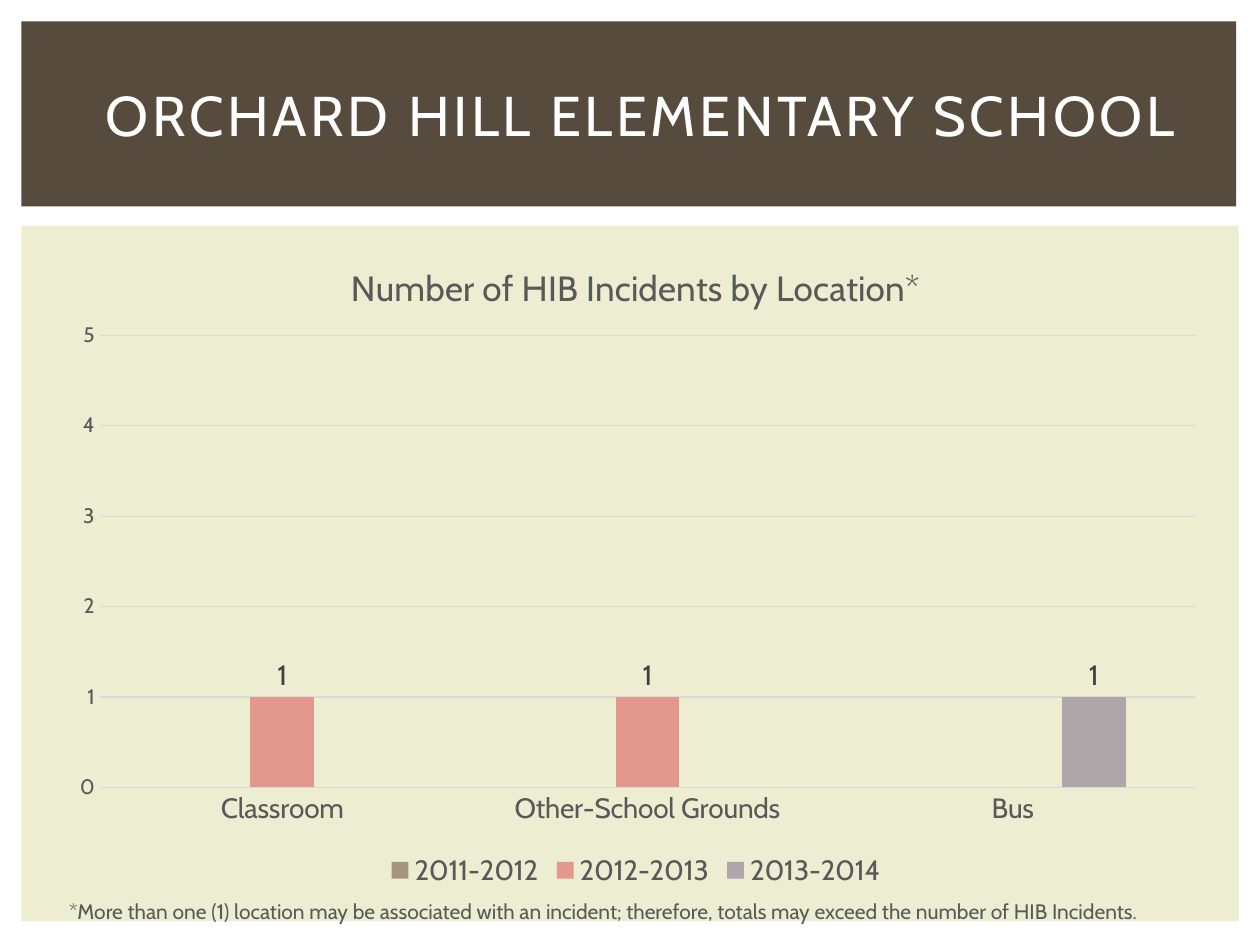
from lxml.etree import SubElement
from pptx import Presentation
from pptx.chart.data import CategoryChartData
from pptx.dml.color import RGBColor
from pptx.enum.chart import XL_CHART_TYPE as ChartType
from pptx.enum.chart import XL_LABEL_POSITION as LabelPosition
from pptx.enum.chart import XL_LEGEND_POSITION as LegendPosition
from pptx.enum.chart import XL_TICK_MARK as TickMark
from pptx.enum.shapes import MSO_SHAPE as Shape
from pptx.enum.text import MSO_ANCHOR as Anchor
from pptx.enum.text import PP_ALIGN as Align
from pptx.oxml.ns import qn
from pptx.util import Cm, Pt

COLORS = {
    "panel": "ECEDD1",
    "band": "564B3C",
    "title": "FFFFFF",
    "text": "595959",
    "label": "404040",
    "grid": "D9D9D9",
}
FONT = "Cabin"


def style_font(font, size, color):
    font.name = FONT
    font.size = Pt(size)
    font.bold = False
    font.color.rgb = RGBColor.from_string(COLORS[color])


def write(frame, text, size=12, color="text", align=Align.LEFT, anchor=Anchor.TOP, spacing=0):
    """Put one formatted run in a text frame; spacing is in points."""
    frame.word_wrap = True
    frame.vertical_anchor = anchor
    para = frame.paragraphs[0]
    para.alignment = align
    span = para.add_run()
    span.text = text
    style_font(span.font, size, color)
    if spacing:
        span.font._element.set("spc", str(spacing * 100))


deck = Presentation()
deck.slide_width, deck.slide_height = Cm(25.4), Cm(19.05)
page = deck.slides.add_slide(deck.slide_layouts[5])

# Background panel and title band
for color, top, width, height in (("panel", 4.55, 24.54, 14.02), ("band", 0.43, 24.49, 3.73)):
    box = page.shapes.add_shape(Shape.RECTANGLE, Cm(0.43), Cm(top), Cm(width), Cm(height))
    box.shadow.inherit = False
    box.fill.solid()
    box.fill.fore_color.rgb = RGBColor.from_string(COLORS[color])
    box.line.fill.background()

# Title, brought in front of the band
title = page.shapes.title
title.left, title.top, title.width, title.height = Cm(1.27), Cm(0.84), Cm(23.29), Cm(2.92)
write(title.text_frame, "ORCHARD HILL ELEMENTARY SCHOOL", size=32, color="title",
      align=Align.CENTER, anchor=Anchor.MIDDLE, spacing=2)
title.element.getparent().append(title.element)

# Incident chart
series_rows = (
    ("2011-2012", (None, None, None), "A5957E"),
    ("2012-2013", (1, 1, None), "E2988C"),
    ("2013-2014", (None, None, 1), "AFA6AA"),
)
data = CategoryChartData(number_format="General")
data.categories = ["Classroom", "Other-School Grounds", "Bus"]
for name, values, _ in series_rows:
    data.add_series(name, values)
chart = page.shapes.add_chart(ChartType.COLUMN_CLUSTERED, Cm(1.07), Cm(4.78),
                              Cm(23.5), Cm(13.21), data).chart
style_font(chart.font, 10, "text")
write(chart.chart_title.text_frame, "Number of HIB Incidents by Location*", size=20,
      align=Align.CENTER)
chart.chart_title.include_in_layout = False

chart.has_legend = True
chart.legend.position = LegendPosition.BOTTOM
chart.legend.include_in_layout = False
style_font(chart.legend.font, 16, "text")

plot = chart.plots[0]
plot.gap_width, plot.overlap = 219, -27
plot.vary_by_categories = False
for series, (_, _, fill) in zip(plot.series, series_rows):
    series.format.fill.solid()
    series.format.fill.fore_color.rgb = RGBColor.from_string(fill)
    labels = series.data_labels
    labels.show_value = True
    labels.position = LabelPosition.OUTSIDE_END
    style_font(labels.font, 16, "label")

categories, counts = chart.category_axis, chart.value_axis
for axis, size in ((categories, 16), (counts, 12)):
    axis.major_tick_mark = axis.minor_tick_mark = TickMark.NONE
    style_font(axis.tick_labels.font, size, "text")
counts.minimum_scale, counts.maximum_scale, counts.major_unit = 0, 5, 1
counts.format.line.fill.background()
for line in (categories.format.line, counts.major_gridlines.format.line):
    line.width = Pt(0.75)
    line.color.rgb = RGBColor.from_string(COLORS["grid"])

# Fixed inner plot area, as fractions of the chart
plot_area = chart.element.find(".//" + qn("c:plotArea"))
layout = plot_area.find(qn("c:layout"))
if layout is None:
    layout = SubElement(plot_area, qn("c:layout"))
    plot_area.insert(0, layout)
manual = SubElement(layout, qn("c:manualLayout"))
for tag, value in (("layoutTarget", "inner"), ("xMode", "edge"), ("yMode", "edge"),
                   ("x", "0.04"), ("y", "0.15"), ("w", "0.94"), ("h", "0.69")):
    SubElement(manual, qn("c:" + tag)).set("val", value)

# Footnote
note = page.shapes.add_textbox(Cm(1.14), Cm(17.98), Cm(23.93), Cm(0.76))
write(note.text_frame, "*More than one (1) location may be associated with an incident; "
      "therefore, totals may exceed the number of HIB Incidents.")

deck.save("out.pptx")
